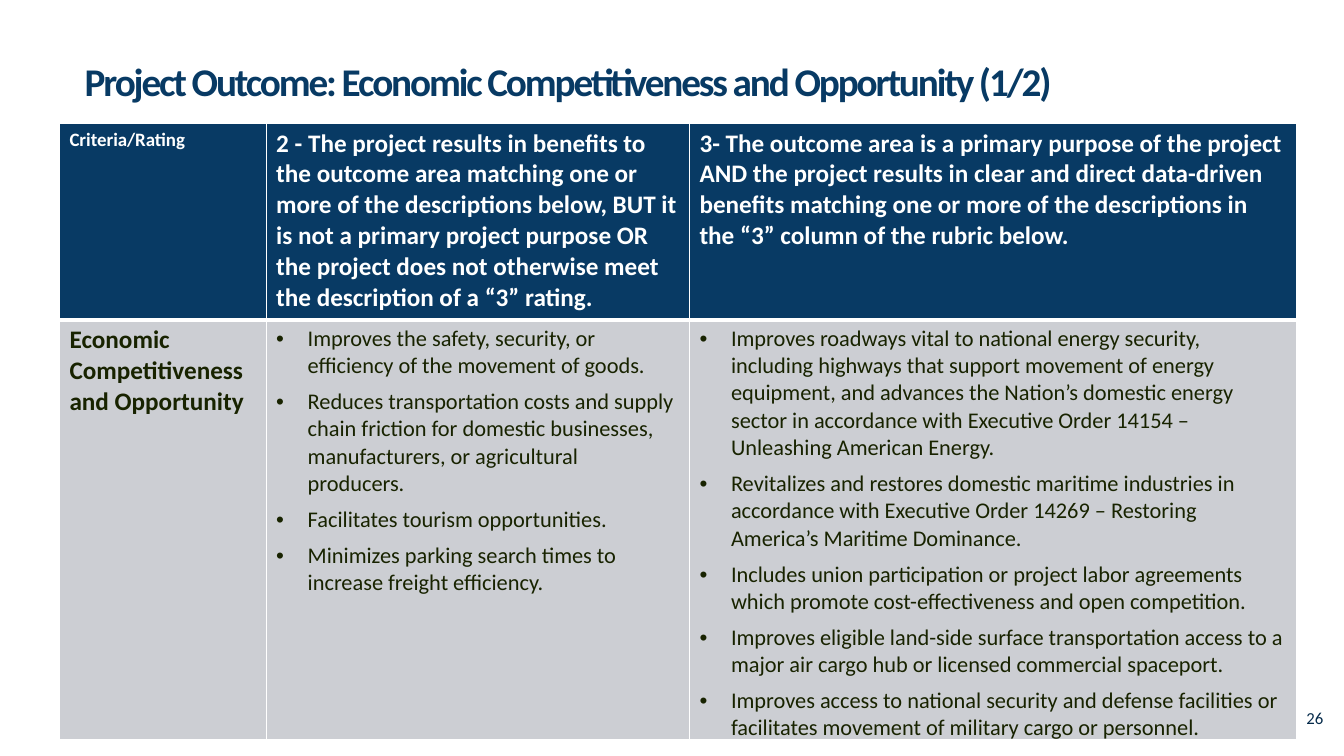
import pptx
import pptx.dml.color
import pptx.enum.text
import pptx.oxml
import pptx.oxml.ns
import pptx.util

Pt = pptx.util.Pt
RGBColor = pptx.dml.color.RGBColor

NAVY = RGBColor(0x08, 0x3A, 0x64)
NUMBER_BLUE = RGBColor(0x06, 0x2B, 0x4B)
DARK_GREEN = RGBColor(0x18, 0x23, 0x00)
GREY = RGBColor(0xCC, 0xCE, 0xD3)
WHITE = RGBColor(0xFF, 0xFF, 0xFF)

TITLE_FONT = {"size": Pt(28), "bold": True, "color": NAVY}
NUMBER_FONT = {"size": Pt(12), "bold": False, "color": NUMBER_BLUE}
CORNER_FONT = {"size": Pt(13.5), "bold": True, "color": WHITE}
HEADING_FONT = {"size": Pt(18), "bold": True, "color": WHITE}
OUTCOME_FONT = {"size": Pt(18), "bold": True, "color": DARK_GREEN}
BULLET_FONT = {"size": Pt(16), "bold": False, "color": DARK_GREEN}

COLUMN_WIDTHS = (147.6, 302.4, 433.4)
ROW_HEIGHTS = (140.4, 262.8)
BULLET_INDENT = Pt(22.5)

HEADINGS = (
    "Criteria/Rating",
    "2 - The project results in benefits to the outcome area matching one or more of the "
    "descriptions below, BUT it is not a primary project purpose OR the project does not "
    "otherwise meet the description of a “3” rating.",
    "3- The outcome area is a primary purpose of the project AND the project results in clear "
    "and direct data-driven benefits matching one or more of the descriptions in the “3” "
    "column of the rubric below.",
)
OUTCOME = "Economic Competitiveness and Opportunity"
RATING_TWO = (
    "Improves the safety, security, or efficiency of the movement of goods.",
    "Reduces transportation costs and supply chain friction for domestic businesses, "
    "manufacturers, or agricultural producers.",
    "Facilitates tourism opportunities.",
    "Minimizes parking search times to increase freight efficiency.",
)
RATING_THREE = (
    "Improves roadways vital to national energy security, including highways that support "
    "movement of energy equipment, and advances the Nation’s domestic energy sector in "
    "accordance with Executive Order 14154 – Unleashing American Energy.",
    "Revitalizes and restores domestic maritime industries in accordance with Executive Order "
    "14269 – Restoring America’s Maritime Dominance.",
    "Includes union participation or project labor agreements which promote "
    "cost-effectiveness and open competition.",
    "Improves eligible land-side surface transportation access to a major air cargo hub or "
    "licensed commercial spaceport.",
    "Improves access to national security and defense facilities or facilitates movement of "
    "military cargo or personnel.",
)


def add_span(para, text, style):
    span = para.add_run()
    span.text = text
    span.font.name = "Calibri"
    for name, value in style.items():
        if name == "color":
            span.font.color.rgb = value
        else:
            setattr(span.font, name, value)
    return span


def make_bullet(para):
    properties = para._p.get_or_add_pPr()
    properties.set("marL", str(BULLET_INDENT))
    properties.set("indent", str(-BULLET_INDENT))
    for tag, name, value in (("a:buFont", "typeface", "Arial"), ("a:buChar", "char", "•")):
        element = pptx.oxml.parse_xml(f"<{tag} {pptx.oxml.ns.nsdecls('a')}/>")
        element.set(name, value)
        properties.append(element)
    para.space_after = Pt(6)


def add_borders(cell, bottom_width):
    """Draw white cell borders; call this before the cell is filled."""
    properties = cell._tc.get_or_add_tcPr()
    for side, width in (("L", 1), ("R", 1), ("T", 1), ("B", bottom_width)):
        properties.append(pptx.oxml.parse_xml(
            f'<a:ln{side} {pptx.oxml.ns.nsdecls("a")} w="{Pt(width)}">'
            f'<a:solidFill><a:srgbClr val="{WHITE}"/></a:solidFill></a:ln{side}>'))


def fill_cell(cell, texts, style, fill, bottom_width, bulleted=False):
    add_borders(cell, bottom_width)
    cell.fill.solid()
    cell.fill.fore_color.rgb = fill
    frame = cell.text_frame
    for index, text in enumerate(texts):
        para = frame.add_paragraph() if index else frame.paragraphs[0]
        if bulleted:
            make_bullet(para)
        add_span(para, text, style)


def place_title(page, left, top, width, height):
    title = page.shapes.title
    position = {"left": left, "top": top, "width": width, "height": height}
    for name, value in position.items():
        setattr(title, name, Pt(value))
    frame = title.text_frame
    settings = {
        "margin_left": 0, "margin_right": 0, "margin_top": 0, "margin_bottom": 0,
        "word_wrap": True,
        "auto_size": pptx.enum.text.MSO_AUTO_SIZE.NONE,
        "vertical_anchor": pptx.enum.text.MSO_ANCHOR.MIDDLE,
    }
    for name, value in settings.items():
        setattr(frame, name, value)
    para = frame.paragraphs[0]
    para.alignment = pptx.enum.text.PP_ALIGN.LEFT
    para.line_spacing = 0.9
    span = add_span(
        para, "Project Outcome: Economic Competitiveness and Opportunity (1/2)", TITLE_FONT)
    span._r.get_or_add_rPr().set("spc", "-150")


def add_page_number(page, left, top, width, height):
    box = page.shapes.add_textbox(Pt(left), Pt(top), Pt(width), Pt(height))
    box.text_frame.word_wrap = True
    add_span(box.text_frame.paragraphs[0], "26", NUMBER_FONT)


def add_rubric(page, left, top):
    frame = page.shapes.add_table(
        len(ROW_HEIGHTS), len(COLUMN_WIDTHS), Pt(left), Pt(top),
        Pt(sum(COLUMN_WIDTHS)), Pt(sum(ROW_HEIGHTS)))
    table = frame.table
    for column, width in zip(table.columns, COLUMN_WIDTHS):
        column.width = Pt(width)
    for row, height in zip(table.rows, ROW_HEIGHTS):
        row.height = Pt(height)
    for index, heading in enumerate(HEADINGS):
        style = HEADING_FONT if index else CORNER_FONT
        fill_cell(table.cell(0, index), [heading], style, NAVY, 3)
    fill_cell(table.cell(1, 0), [OUTCOME], OUTCOME_FONT, GREY, 1)
    for index, texts in enumerate((RATING_TWO, RATING_THREE), start=1):
        fill_cell(table.cell(1, index), texts, BULLET_FONT, GREY, 1, bulleted=True)


def main():
    deck = pptx.Presentation()
    deck.slide_width = Pt(960)
    deck.slide_height = Pt(540)
    page = deck.slides.add_slide(deck.slide_layouts.get_by_name("Title Only"))
    place_title(page, 60.5, 42.5, 754, 35.3)
    add_page_number(page, 926, 502, 34, 34)
    add_rubric(page, 42.5, 88)
    deck.save("out.pptx")


if __name__ == "__main__":
    main()
